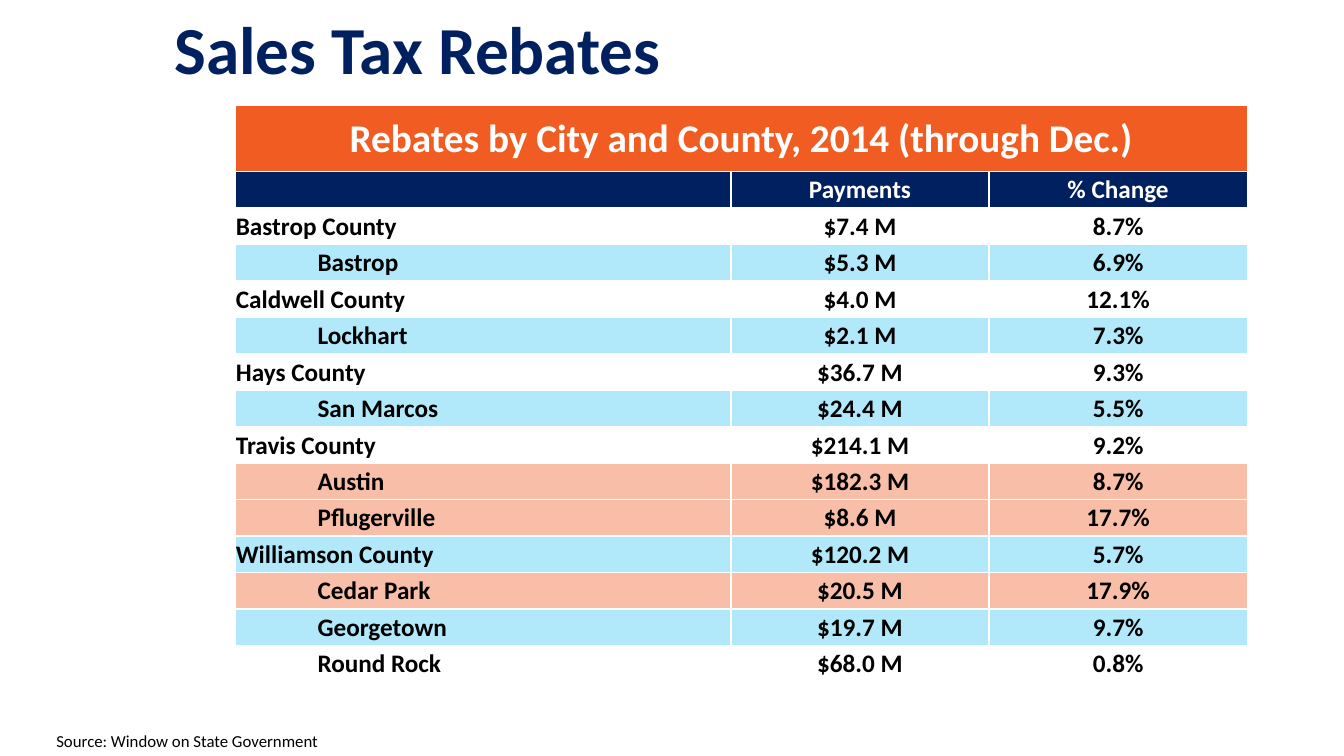
from lxml import etree
from pptx import Presentation
from pptx.dml.color import RGBColor
from pptx.enum.text import MSO_ANCHOR, MSO_AUTO_SIZE, PP_ALIGN
from pptx.oxml.ns import qn
from pptx.util import Inches, Pt

LEFT, CENTER = PP_ALIGN.LEFT, PP_ALIGN.CENTER
MIDDLE = MSO_ANCHOR.MIDDLE
GROW = MSO_AUTO_SIZE.SHAPE_TO_FIT_TEXT
TITLE_ONLY = 5

NAVY, ORANGE, BLACK, WHITE = "002060", "F15C22", "000000", "FFFFFF"
BLUE, PEACH = "B1E9FB", "F9BEA7"

TABLE_TITLE = "Rebates by City and County, 2014 (through Dec.)"
HEADERS = ("", "Payments", "% Change")
REBATES = [
    ("Bastrop County", "$7.4 M", "8.7%", WHITE),
    ("Bastrop", "$5.3 M", "6.9%", BLUE),
    ("Caldwell County", "$4.0 M", "12.1%", WHITE),
    ("Lockhart", "$2.1 M", "7.3%", BLUE),
    ("Hays County", "$36.7 M", "9.3%", WHITE),
    ("San Marcos", "$24.4 M", "5.5%", BLUE),
    ("Travis County", "$214.1 M", "9.2%", WHITE),
    ("Austin", "$182.3 M", "8.7%", PEACH),
    ("Pflugerville", "$8.6 M", "17.7%", PEACH),
    ("Williamson County", "$120.2 M", "5.7%", BLUE),
    ("Cedar Park", "$20.5 M", "17.9%", PEACH),
    ("Georgetown", "$19.7 M", "9.7%", BLUE),
    ("Round Rock", "$68.0 M", "0.8%", WHITE),
]
COLUMN_WIDTHS = (4.92, 2.56, 2.56)
TITLE_ROW_HEIGHT = 0.65


def rgb(value):
    return RGBColor.from_string(value)


class SlideBuilder:
    font = "Calibri"

    def __init__(self, presentation):
        self.slide = presentation.slides.add_slide(presentation.slide_layouts[TITLE_ONLY])

    def set_text(self, text_frame, text, size, color, bold=False, align=LEFT):
        text_frame.text = text
        paragraph = text_frame.paragraphs[0]
        paragraph.alignment = align
        for run in paragraph.runs:
            run.font.name = self.font
            run.font.size = Pt(size)
            run.font.bold = bold
            run.font.color.rgb = rgb(color)
        return paragraph

    def title(self, text, left, top, width, height):
        shape = self.slide.shapes.title
        shape.left, shape.top = Inches(left), Inches(top)
        shape.width, shape.height = Inches(width), Inches(height)
        shape.text_frame.vertical_anchor = MIDDLE
        paragraph = self.set_text(shape.text_frame, text, 48, NAVY, bold=True)
        paragraph.line_spacing = 0.9

    def text_box(self, text, left, top, width, height):
        shape = self.slide.shapes.add_textbox(
            Inches(left), Inches(top), Inches(width), Inches(height))
        shape.text_frame.word_wrap = True
        shape.text_frame.auto_size = GROW
        self.set_text(shape.text_frame, text, 12, BLACK)

    def borders(self, cell):
        """Draw thin white lines on all four sides; call before filling the cell."""
        properties = cell._tc.get_or_add_tcPr()
        for side in ("lnL", "lnR", "lnT", "lnB"):
            line = etree.SubElement(properties, qn(f"a:{side}"), w=str(Pt(1)))
            fill = etree.SubElement(line, qn("a:solidFill"))
            etree.SubElement(fill, qn("a:srgbClr"), val=WHITE)

    def cell(self, cell, text, fill, color, size=18, align=CENTER):
        self.borders(cell)
        cell.fill.solid()
        cell.fill.fore_color.rgb = rgb(fill)
        cell.vertical_anchor = MIDDLE
        cell.margin_left = cell.margin_right = cell.margin_top = Inches(0.01)
        cell.margin_bottom = 0
        return self.set_text(cell.text_frame, text, size, color, bold=True, align=align)

    def rebate_table(self, left, top, height):
        row_count = len(REBATES) + 2
        table = self.slide.shapes.add_table(
            row_count, len(COLUMN_WIDTHS), Inches(left), Inches(top),
            Inches(sum(COLUMN_WIDTHS)), Inches(height)).table
        for column, width in zip(table.columns, COLUMN_WIDTHS):
            column.width = Inches(width)
        row_height = Inches((height - TITLE_ROW_HEIGHT) / (row_count - 1))
        for row in table.rows:
            row.height = row_height
        table.rows[0].height = Inches(TITLE_ROW_HEIGHT)

        table.cell(0, 0).merge(table.cell(0, len(COLUMN_WIDTHS) - 1))
        self.cell(table.cell(0, 0), TABLE_TITLE, ORANGE, WHITE, size=28)
        for column, header in enumerate(HEADERS):
            self.cell(table.cell(1, column), header, NAVY, WHITE)
        for row, (place, payments, change, fill) in enumerate(REBATES, start=2):
            paragraph = self.cell(table.cell(row, 0), place, fill, BLACK, align=LEFT)
            if not place.endswith("County"):
                paragraph._p.get_or_add_pPr().set("marL", str(Inches(0.81)))
            self.cell(table.cell(row, 1), payments, fill, BLACK)
            self.cell(table.cell(row, 2), change, fill, BLACK)


def main():
    presentation = Presentation()
    presentation.slide_width, presentation.slide_height = Inches(13.33), Inches(7.5)
    builder = SlideBuilder(presentation)
    builder.title("Sales Tax Rebates", 1.63, 0, 11.7, 1.05)
    builder.rebate_table(2.33, 1.05, 5.72)
    builder.text_box("Source: Window on State Government", 0.46, 7.2, 4.75, 0.3)
    presentation.save("out.pptx")


if __name__ == "__main__":
    main()
